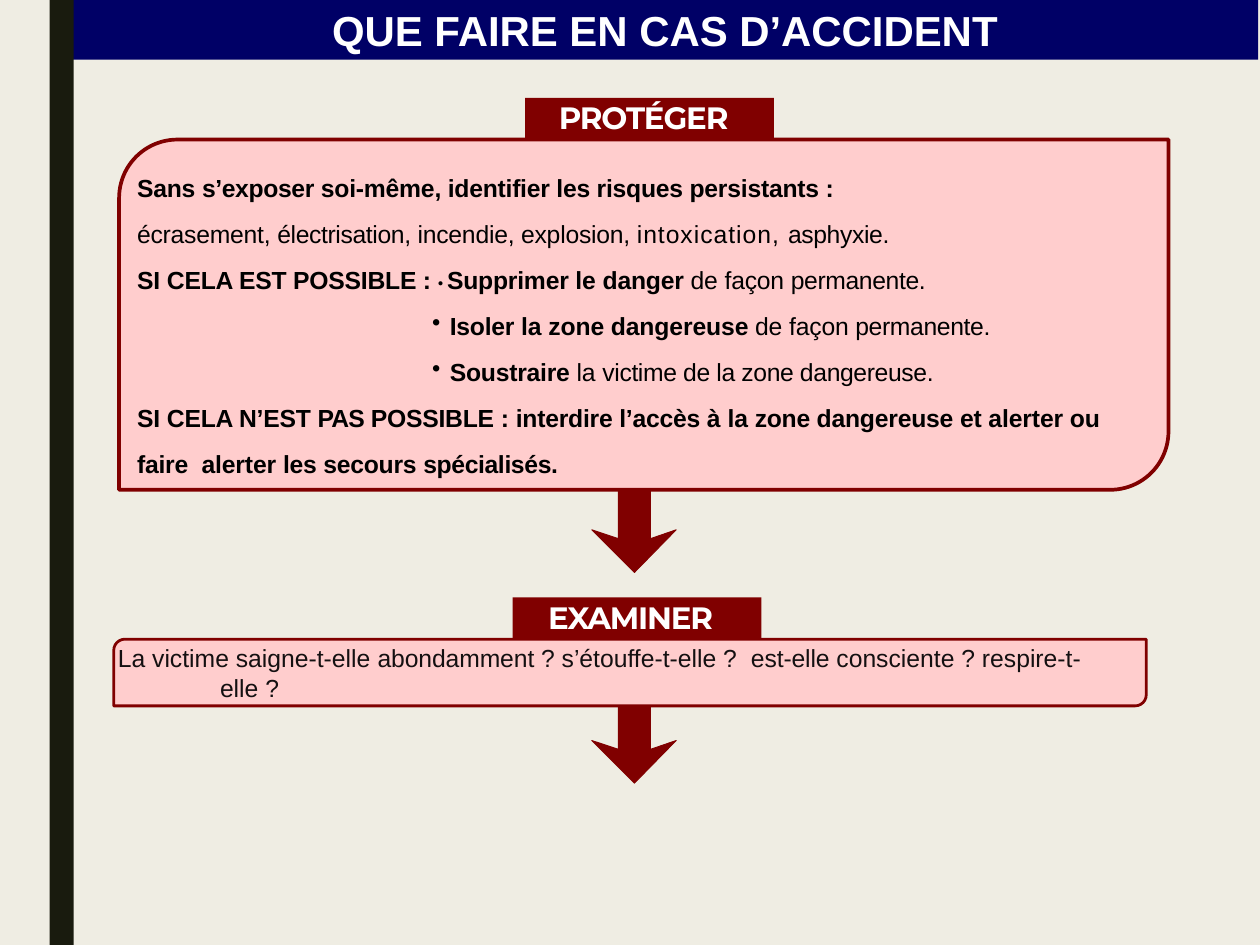
import pptx
import pptx.dml.color
import pptx.enum.shapes
import pptx.enum.text
import pptx.oxml.ns
import pptx.util
from lxml import etree

Inches = pptx.util.Inches
Pt = pptx.util.Pt
MSO = pptx.enum.shapes.MSO_SHAPE
ANCHOR = pptx.enum.text.MSO_ANCHOR
ALIGN = pptx.enum.text.PP_ALIGN

DARK_RED, PINK, NAVY = "800000", "FFCDCD", "000066"
BLACK, WHITE = "000000", "FFFFFF"


def rgb(value):
    return pptx.dml.color.RGBColor.from_string(value)


class Deck:
    """Holds the style and the current slide."""

    def __init__(self, width, height, background):
        self.prs = pptx.Presentation()
        self.prs.slide_width, self.prs.slide_height = Inches(width), Inches(height)
        self.s = self.prs.slides.add_slide(self.prs.slide_layouts[5])
        self.s.background.fill.solid()
        self.s.background.fill.fore_color.rgb = rgb(background)

    def paint(self, sp, fill, line=None, weight=0.75):
        sp.fill.solid()
        sp.fill.fore_color.rgb = rgb(fill)
        if line:
            sp.line.color.rgb = rgb(line)
            sp.line.width = Pt(weight)
        else:
            sp.line.fill.background()

    def box(self, kind, at, fill, line=None, weight=0.75):
        sp = self.s.shapes.add_shape(kind, *map(Inches, at))
        sp.shadow.inherit = False
        self.paint(sp, fill, line, weight)
        return sp

    def frame(self, sp, anchor=ANCHOR.TOP, top=0, right=0):
        tf = sp.text_frame
        tf.word_wrap = True
        tf.vertical_anchor = anchor
        tf.margin_left = tf.margin_bottom = 0
        tf.margin_top, tf.margin_right = Inches(top), Inches(right)
        return tf

    def paragraph(self, p, left=0.0, first=0.0, bullet=None):
        p.alignment = ALIGN.LEFT
        pPr = p._p.get_or_add_pPr()
        pPr.set("marL", str(Inches(left)))
        pPr.set("indent", str(Inches(first)))
        if bullet:
            etree.SubElement(pPr, pptx.oxml.ns.qn("a:buChar")).set("char", bullet)

    def run(self, p, text, size, color, bold=False, spacing=0, font="Arial", raised=0):
        r = p.add_run()
        r.text = text
        r.font.name, r.font.size, r.font.bold = font, Pt(size), bold
        r.font.color.rgb = rgb(color)
        rPr = r.font._element
        if spacing:
            rPr.set("spc", str(round(spacing * 100)))
        if raised:
            rPr.set("baseline", str(raised * 1000))

    def title(self, text, at):
        sp = self.s.shapes.title
        sp.left, sp.top, sp.width, sp.height = map(Inches, at)
        self.paint(sp, NAVY)
        tf = sp.text_frame
        tf.vertical_anchor = ANCHOR.MIDDLE
        p = tf.paragraphs[0]
        p.alignment = ALIGN.CENTER
        self.run(p, text, 34, WHITE, True)

    def label(self, text, left, top, indent):
        sp = self.box(MSO.RECTANGLE, (left, top, 2.8, 0.47), DARK_RED)
        p = self.frame(sp, top=0.01).paragraphs[0]
        self.paragraph(p, indent)
        self.run(p, text, 25, WHITE, True, -0.9, "Montserrat")

    def arrow(self, top):
        outline = [(6.96, 0), (7.32, 0), (7.32, 0.58), (7.61, 0.48),
                   (7.14, 0.96), (6.66, 0.48), (6.96, 0.58)]
        points = [(Inches(x), Inches(top + y)) for x, y in outline]
        builder = self.s.shapes.build_freeform(*points[0])
        builder.add_line_segments(points[1:], close=True)
        sp = builder.convert_to_shape()
        sp.shadow.inherit = False
        self.paint(sp, DARK_RED, DARK_RED)

    def panel(self, at, weight):
        return self.box(MSO.ROUND_2_DIAG_RECTANGLE, at, PINK, DARK_RED, weight)


# Each line: bulleted or not, then runs of (text, bold, letter spacing)
PROTECT = [
    (False, [("Sans ", True, -0.2), ("s’exposer ", True, -0.3),
             ("soi-même, identifier les risques persistants ", True, -0.2),
             (":", True, 0)]),
    (False, [("écrasement, ", False, -0.2), ("électrisation, ", False, -0.3),
             ("incendie, explosion, ", False, -0.2),
             ("intoxication, ", False, 0.8), ("asphyxie.", False, -0.3)]),
    (False, [("SI ", True, -0.1), ("CELA EST POSSIBLE ", True, -0.2),
             (": ", True, 0), ("• ", True, 0), ("Supprimer ", True, -0.2),
             ("le ", True, -0.1), ("danger ", True, -0.2), ("de ", False, -0.1),
             ("façon ", False, -0.2), ("permanente.", False, -0.3)]),
    (True, [("Isoler ", True, -0.2), ("la zone dangereuse ", True, -0.1),
            ("de ", False, -0.1), ("façon ", False, -0.2),
            ("permanente.", False, -0.3)]),
    (True, [("Soustraire ", True, -0.2), ("la ", False, -0.1),
            ("victime de la zone dangereuse.", False, -0.3)]),
    (False, [("SI ", True, -0.1), ("CELA N’EST ", True, -0.2), ("PAS ", True, -0.7),
             ("POSSIBLE ", True, -0.2), (": ", True, 0),
             ("interdire l’accès ", True, -0.2), ("à ", True, 0), ("la ", True, -0.1),
             ("zone dangereuse ", True, -0.2), ("et alerter ou ", True, -0.1),
             ("faire  ", True, -0.2), ("alerter ", True, -0.1),
             ("les secours ", True, -0.2), ("spécialisés.", True, -0.3)]),
]
EXAMINE = [("La victime saigne-t-elle ", 0), ("abondamment ", -0.1),
           ("? s’étouffe-t-elle ?  ", 0), ("est-elle ", -0.1),
           ("consciente ? respire-t-elle ?", 0)]


def main():
    deck = Deck(14.18, 10.63, "EFEDE3")

    # Side band and title
    deck.box(MSO.RECTANGLE, (0.56, 0, 0.27, 10.63), "191B0E")
    deck.title("QUE FAIRE EN CAS D’ACCIDENT", (0.81, 0, 13.35, 0.67))

    # Arrows sit behind the panels
    for top in (5.48, 7.85):
        deck.arrow(top)

    # Protect
    tf = deck.frame(deck.panel((1.34, 1.57, 11.81, 3.94), 3), right=0.2)
    for i, (bulleted, runs) in enumerate(PROTECT):
        p = tf.add_paragraph() if i else tf.paragraphs[0]
        p.line_spacing = 1.55
        if bulleted:
            deck.paragraph(p, 3.53, -0.2, "•")
        else:
            deck.paragraph(p, 0.01)
        for text, bold, spacing in runs:
            deck.run(p, text, 20, BLACK, bold, spacing, raised=2 if text == "• " else 0)
    deck.label("PROTÉGER", 5.91, 1.1, 0.38)

    # Examine
    deck.label("EXAMINER", 5.77, 6.72, 0.4)
    sp = deck.panel((1.28, 7.19, 11.62, 0.75), 2.25)
    p = deck.frame(sp, ANCHOR.MIDDLE, right=0.5).paragraphs[0]
    deck.paragraph(p, 1.16, -1.15)
    for text, spacing in EXAMINE:
        deck.run(p, text, 20, "141011", spacing=spacing)

    deck.prs.save("out.pptx")


if __name__ == "__main__":
    main()
